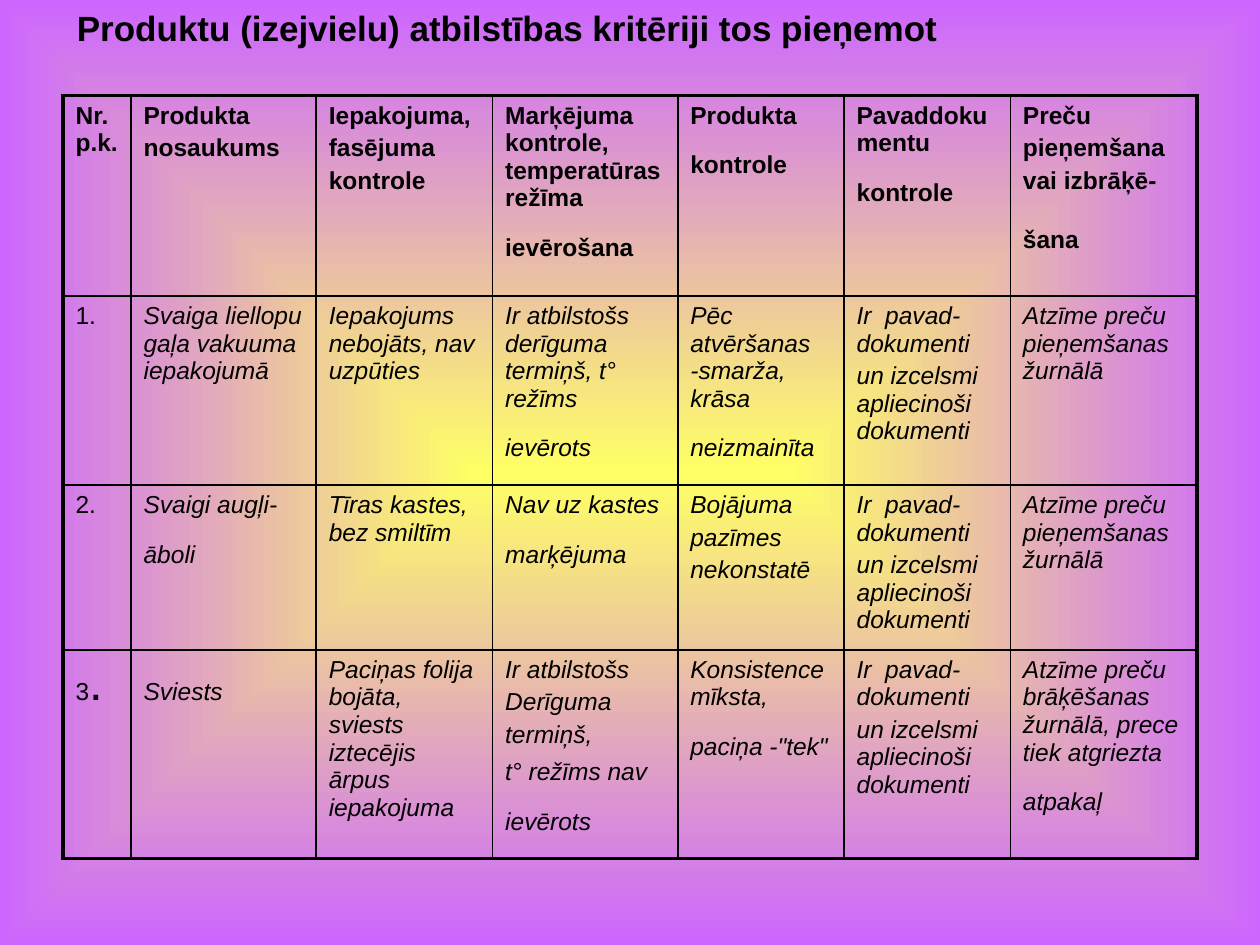
"""Builds a slide with the acceptance criteria table for food products."""
from lxml import etree
from pptx import Presentation
from pptx import util as u
from pptx.dml.color import RGBColor
from pptx.enum import text
from pptx.oxml.ns import qn

COLORS = {"ink": "000000", "center": "FFFF66", "edge": "CC66FF"}
FONT = "Arial"
SMALL, BIG = 14, 28
THIN, THICK = 1, 2.25
TITLE = "Produktu (izejvielu) atbilstības kritēriji tos pieņemot"
DOCUMENTS = "Ir  pavad-dokumenti\nun izcelsmi apliecinoši dokumenti"
JOURNAL = "Atzīme preču pieņemšanas žurnālā"
COL_WIDTHS = [0.54, 1.47, 1.4, 1.47, 1.32, 1.32, 1.48]
ROW_HEIGHTS = [1.59, 1.39, 1.02, 1.03]
ROWS = [
    ["Nr.p.k.", "Produkta\nnosaukums", "Iepakojuma,\nfasējuma\nkontrole",
     "Marķējuma kontrole, temperatūras režīma ievērošana| ",
     "Produkta kontrole| ", "Pavaddokumentu kontrole| ",
     "Preču\npieņemšana\nvai izbrāķē-\nšana| "],
    ["1.", "Svaiga liellopu gaļa vakuuma iepakojumā",
     "Iepakojums nebojāts, nav uzpūties",
     "Ir atbilstošs derīguma termiņš, t° režīms ievērots| ",
     "Pēc atvēršanas -smarža, krāsa neizmainīta| ", DOCUMENTS, JOURNAL],
    ["2.", "Svaigi augļi-āboli| ", "Tīras kastes, bez smiltīm",
     "Nav uz kastes marķējuma| ", "Bojājuma\npazīmes\nnekonstatē",
     DOCUMENTS, JOURNAL],
    ["3|.", "Sviests| ",
     "Paciņas folija bojāta, sviests iztecējis ārpus iepakojuma",
     "Ir atbilstošs\nDerīguma\ntermiņš,\nt° režīms nav ievērots| ",
     "Konsistence mīksta, paciņa -\"tek\"| ", DOCUMENTS,
     "Atzīme preču brāķēšanas žurnālā, prece tiek atgriezta atpakaļ| "],
]


def rgb(name):
    return RGBColor.from_string(COLORS[name])


def style_run(r, size, bold=False, italic=False):
    r.font.name, r.font.size = FONT, u.Pt(size)
    r.font.bold, r.font.italic = bold, italic
    r.font.color.rgb = rgb("ink")


def paint_background(s):
    fill = s.background.fill
    fill.gradient()
    for stop, name in zip(fill.gradient_stops, ("center", "edge")):
        stop.color.rgb = rgb(name)
    grad = s.element.find(".//" + qn("a:gradFill"))
    grad.remove(grad.find(qn("a:lin")))
    shade = etree.SubElement(grad, qn("a:path"))
    shade.set("path", "shape")
    etree.SubElement(shade, qn("a:fillToRect"), dict.fromkeys("ltrb", "50000"))


def add_title(s):
    sp = s.shapes.title
    sp.left, sp.top, sp.width, sp.height = map(u.Inches, (0.51, 0, 8.58, 0.43))
    tf = sp.text_frame
    tf.text = TITLE
    tf.word_wrap = True
    tf.auto_size = text.MSO_AUTO_SIZE.SHAPE_TO_FIT_TEXT
    tf.vertical_anchor = text.MSO_ANCHOR.TOP
    p = tf.paragraphs[0]
    p.alignment = text.PP_ALIGN.LEFT
    p.line_spacing = 1.0
    style_run(p.runs[0], 20, bold=True)


def fill_cell(cell, content, bold, italic):
    cell.text_frame.text = content.replace("|", "")
    for p, line in zip(cell.text_frame.paragraphs, content.split("\n")):
        before = etree.SubElement(p._p.get_or_add_pPr(), qn("a:spcBef"))
        etree.SubElement(before, qn("a:spcPct"), val="20000")
        body, _, tail = line.partition("|")
        p.runs[0].text = body
        style_run(p.runs[0], SMALL, bold, italic)
        if tail:
            r = p.add_run()
            r.text = tail
            style_run(r, BIG, bold)


def set_borders(cell, outer):
    props = cell._tc.get_or_add_tcPr()
    for side in "LRTB":
        width = THICK if side in outer else THIN
        ln = etree.SubElement(props, qn("a:ln" + side), w=str(u.Pt(width)))
        solid = etree.SubElement(ln, qn("a:solidFill"))
        etree.SubElement(solid, qn("a:srgbClr"), val=COLORS["ink"])


def add_criteria(s):
    last_row, last_col = len(ROWS) - 1, len(COL_WIDTHS) - 1
    frame = s.shapes.add_table(len(ROWS), len(COL_WIDTHS), u.Inches(0.5),
                               u.Inches(0.76), u.Inches(9), u.Inches(6.26))
    table = frame.table
    table.first_row = table.horz_banding = False
    for col, width in zip(table.columns, COL_WIDTHS):
        col.width = u.Inches(width)
    for row, height in zip(table.rows, ROW_HEIGHTS):
        row.height = u.Inches(height)
    frame.height = u.Inches(6.26)
    for i, row in enumerate(ROWS):
        for j, content in enumerate(row):
            cell = table.cell(i, j)
            fill_cell(cell, content, bold=i == 0, italic=i > 0 and j > 0)
            edges = {"L": j == 0, "R": j == last_col, "T": i == 0, "B": i == last_row}
            set_borders(cell, [side for side, outer in edges.items() if outer])
            cell.fill.background()


def main():
    prs = Presentation()
    prs.slide_width, prs.slide_height = u.Inches(10), u.Inches(7.5)
    s = prs.slides.add_slide(prs.slide_layouts[5])
    paint_background(s)
    add_criteria(s)
    add_title(s)
    prs.save("out.pptx")


if __name__ == "__main__":
    main()
